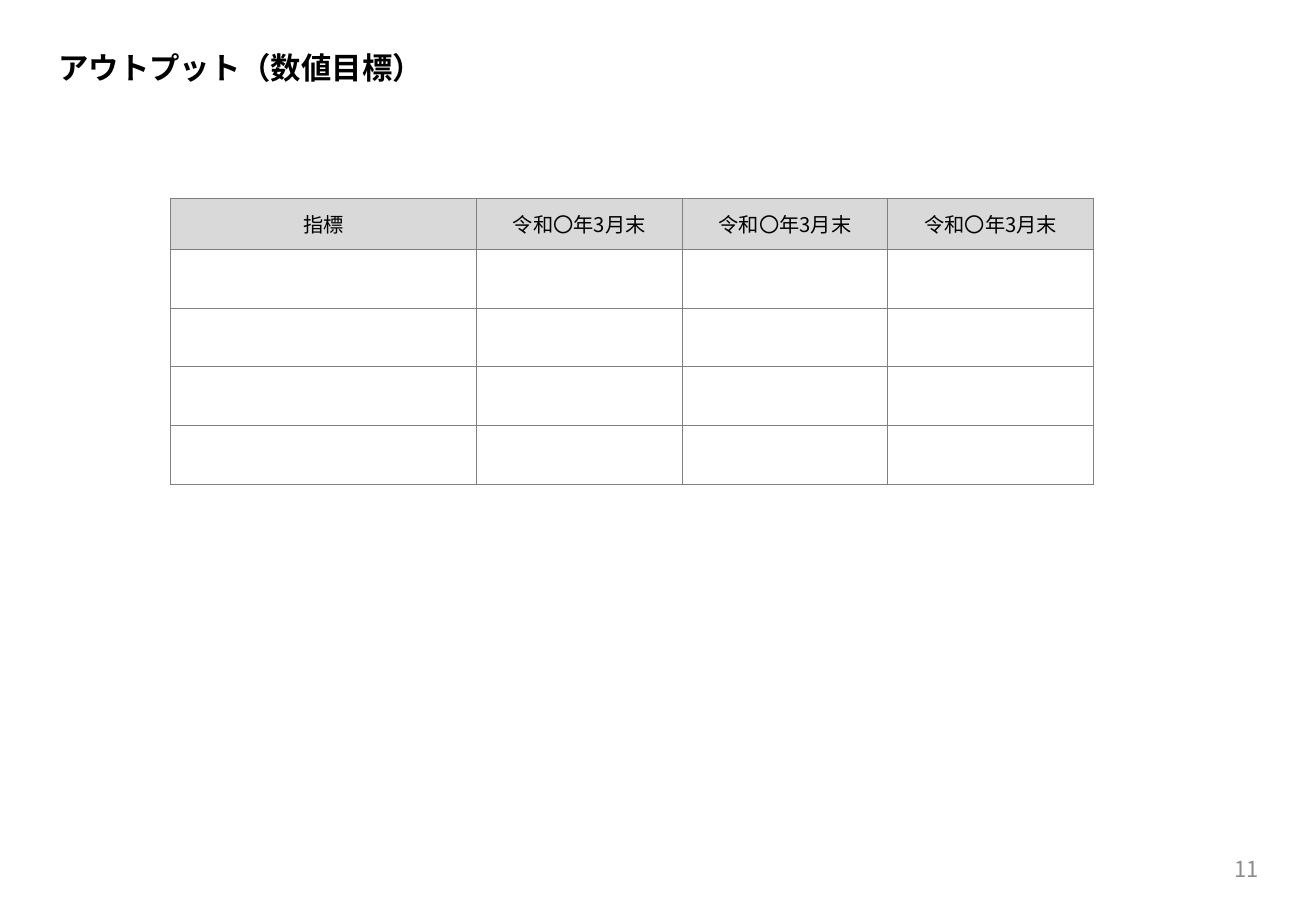
import pptx
import pptx.dml.color
import pptx.enum.text
import pptx.oxml
import pptx.oxml.ns
import pptx.util
from pptx.util import Cm

FONT = "Noto Sans CJK JP"
COLOURS = {"text": "000000", "number": "8C8C8C", "header": "D9D9D9", "border": "808080"}
ALIGN = pptx.enum.text.PP_ALIGN
ANCHOR = pptx.enum.text.MSO_ANCHOR

HEADERS = ["指標"] + ["令和〇年3月末"] * 3
COLUMN_WIDTHS = [6.4] + [4.3] * 3
ROW_HEIGHTS = [1.07] + [1.23] * 4


def rgb(name):
    return pptx.dml.color.RGBColor.from_string(COLOURS[name])


class TargetSlide:
    """Holds the font and the current slide."""

    def __init__(self, slide, font_name):
        self.slide = slide
        self.font_name = font_name

    def add_words(self, paragraph, words, colour, align, **formats):
        paragraph.alignment = align
        run = paragraph.add_run()
        run.text = words
        run.font.color.rgb = rgb(colour)
        for key, value in {"name": self.font_name, **formats}.items():
            setattr(run.font, key, value)
        latin = run.font._element.find(pptx.oxml.ns.qn("a:latin"))
        latin.addnext(pptx.oxml.parse_xml(
            f'<a:ea {pptx.oxml.ns.nsdecls("a")} typeface="{self.font_name}"/>'))

    def text(self, left, top, width, height, words, colour="text",
             align=ALIGN.LEFT, anchor=ANCHOR.TOP, **formats):
        box = self.slide.shapes.add_textbox(Cm(left), Cm(top), Cm(width), Cm(height))
        for key, value in {"word_wrap": True, "vertical_anchor": anchor}.items():
            setattr(box.text_frame, key, value)
        self.add_words(box.text_frame.paragraphs[0], words, colour, align, **formats)

    def border(self, cell, points):
        properties = cell._tc.get_or_add_tcPr()
        for place, side in enumerate("LRTB"):
            properties.insert(place, pptx.oxml.parse_xml(
                f'<a:ln{side} {pptx.oxml.ns.nsdecls("a")} w="{pptx.util.Pt(points)}">'
                f'<a:solidFill><a:srgbClr val="{COLOURS["border"]}"/></a:solidFill>'
                f'</a:ln{side}>'))

    def table(self, left, top, widths, heights, headers):
        grid = self.slide.shapes.add_table(
            len(heights), len(widths), Cm(left), Cm(top),
            Cm(sum(widths)), Cm(sum(heights))).table
        for column, width in zip(grid.columns, widths):
            column.width = Cm(width)
        for row, height in zip(grid.rows, heights):
            row.height = Cm(height)
        for cell in grid.iter_cells():
            cell.vertical_anchor = ANCHOR.MIDDLE
            cell.fill.background()
            cell.text_frame.paragraphs[0].font.size = pptx.util.Pt(12)
            self.border(cell, 0.5)
        for cell, header in zip(grid.rows[0].cells, headers):
            cell.fill.solid()
            cell.fill.fore_color.rgb = rgb("header")
            self.add_words(cell.text_frame.paragraphs[0], header, "text", ALIGN.CENTER,
                           size=pptx.util.Pt(12), bold=False)


def main():
    deck = pptx.Presentation()
    deck.slide_width, deck.slide_height = Cm(27.51), Cm(19.05)
    targets = TargetSlide(deck.slides.add_slide(deck.slide_layouts[6]), FONT)
    targets.text(0.97, 0.91, 10.62, 1.02, "アウトプット（数値目標）",
                 size=pptx.util.Pt(18), bold=True)
    targets.table(3.56, 4.14, COLUMN_WIDTHS, ROW_HEIGHTS, HEADERS)
    targets.text(20.14, 17.65, 6.43, 1.02, "11", "number", ALIGN.RIGHT,
                 ANCHOR.MIDDLE, size=pptx.util.Pt(13))
    deck.save("out.pptx")


if __name__ == "__main__":
    main()
